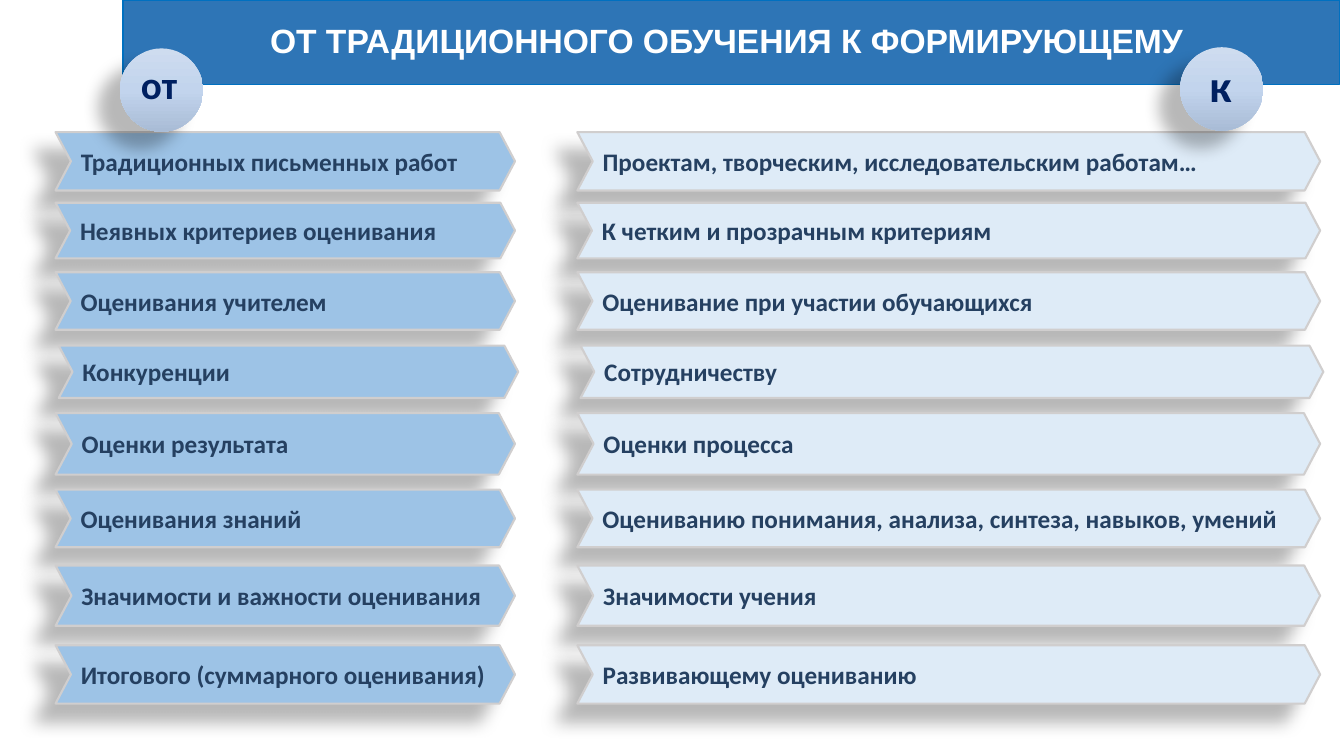
from copy import deepcopy
from dataclasses import dataclass
from typing import Any

from lxml.etree import SubElement
from pptx import Presentation
from pptx.dml.color import RGBColor
from pptx.enum.shapes import MSO_SHAPE
from pptx.enum.text import MSO_ANCHOR, MSO_AUTO_SIZE, PP_ALIGN
from pptx.oxml.ns import qn
from pptx.util import Cm, Pt

COLORS = {
    "banner": "2E75B6",
    "banner_line": "0070C0",
    "title": "FFFFFF",
    "from": "9DC3E6",
    "to": "DEEBF7",
    "arrow_line": "D0CECE",
    "arrow_text": "254061",
    "badge_text": "002060",
    "badge_top": "CEDCEF",
    "badge_middle": "C2D4ED",
    "badge_bottom": "A9BCD6",
    "shadow": "000000",
}
BADGE_SIZE = 2.1
BADGE_STOPS = ((0, "badge_top"), (0.5, "badge_middle"), (1, "badge_bottom"))


@dataclass(frozen=True)
class Column:
    left: float
    width: float
    color: str


@dataclass(frozen=True)
class Row:
    top: float
    height: float
    texts: tuple[str, str]
    shift: float = 0


@dataclass(frozen=True)
class Badge:
    left: float
    top: float
    text: str
    size: int
    text_left: float
    text_top: float
    text_width: float
    text_height: float


COLUMNS = (Column(1.4, 11.58, "from"), Column(14.55, 18.72, "to"))
ROWS = (
    Row(3.33, 1.47, ("Традиционных письменных работ",
                     "Проектам, творческим, исследовательским работам…")),
    Row(5.11, 1.4, ("Неявных критериев оценивания", "К четким и прозрачным критериям")),
    Row(6.86, 1.45, ("Оценивания учителем", "Оценивание при участии обучающихся")),
    Row(8.71, 1.32, ("Конкуренции", "Сотрудничеству"), 0.08),
    Row(10.41, 1.55, ("Оценки результата", "Оценки процесса")),
    Row(12.34, 1.45, ("Оценивания знаний",
                      "Оцениванию понимания, анализа, синтеза, навыков, умений")),
    Row(14.25, 1.52, ("Значимости и важности оценивания", "Значимости учения")),
    Row(16.26, 1.47, ("Итогового (суммарного оценивания)", "Развивающему оцениванию")),
)
BADGES = (
    Badge(3.02, 1.22, "от", 28, 3.3, 1.4, 1.42, 1.45),
    Badge(29.74, 1.19, "к", 32, 30.23, 1.32, 1.07, 1.63),
)


def rgb(name: str) -> RGBColor:
    return RGBColor.from_string(COLORS[name])


def set_formats(target: Any, formats: dict[str, Any]) -> None:
    for name, value in formats.items():
        setattr(target, name, value)


def set_solid(shape: Any, fill: str, line: str, width: float) -> None:
    shape.fill.solid()
    shape.fill.fore_color.rgb = rgb(fill)
    shape.line.color.rgb = rgb(line)
    shape.line.width = Pt(width)


def write(shape: Any, text: str, font: str, size: int, color: str,
          frame_formats: dict[str, Any], para_formats: dict[str, Any]) -> None:
    set_formats(shape.text_frame, frame_formats)
    para = shape.text_frame.paragraphs[0]
    set_formats(para, para_formats)
    span = para.add_run()
    span.text = text
    set_formats(span.font, {"name": font, "size": Pt(size), "bold": True})
    span.font.color.rgb = rgb(color)


def add_shadow(shape: Any) -> None:
    shape.shadow.inherit = False
    effects = shape._element.spPr.find(qn("a:effectLst"))
    shadow = SubElement(effects, qn("a:outerShdw"), {
        "blurRad": str(Pt(11.8)), "dist": str(Pt(19.7)),
        "dir": str(141 * 60000), "algn": "ctr", "rotWithShape": "0"})
    color = SubElement(shadow, qn("a:srgbClr"), val=COLORS["shadow"])
    SubElement(color, qn("a:alpha"), val="28000")


def add_title(page: Any) -> None:
    title = page.shapes.title
    set_formats(title, {"left": Cm(3.1), "top": Cm(0), "width": Cm(30.66), "height": Cm(2.13)})
    set_solid(title, "banner", "banner_line", 1)
    write(title, "ОТ ТРАДИЦИОННОГО ОБУЧЕНИЯ К ФОРМИРУЮЩЕМУ ", "Arial", 24, "title",
          {"vertical_anchor": MSO_ANCHOR.MIDDLE, "word_wrap": True,
           "auto_size": MSO_AUTO_SIZE.NONE},
          {"alignment": PP_ALIGN.CENTER, "line_spacing": 0.9})


def add_arrow(page: Any, column: Column, row: Row, text: str) -> None:
    arrow = page.shapes.add_shape(
        MSO_SHAPE.CHEVRON, Cm(column.left + row.shift), Cm(row.top),
        Cm(column.width), Cm(row.height))
    arrow.adjustments[0] = 0.264
    set_solid(arrow, column.color, "arrow_line", 1.5)
    add_shadow(arrow)
    write(arrow, text, "Calibri", 18, "arrow_text",
          {"vertical_anchor": MSO_ANCHOR.MIDDLE, "word_wrap": True},
          {"alignment": PP_ALIGN.LEFT})


def add_badge(page: Any, badge: Badge) -> None:
    circle = page.shapes.add_shape(
        MSO_SHAPE.OVAL, Cm(badge.left), Cm(badge.top), Cm(BADGE_SIZE), Cm(BADGE_SIZE))
    circle.fill.gradient()
    circle.fill.gradient_angle = 270
    stop_list = circle._element.spPr.find(qn("a:gradFill")).find(qn("a:gsLst"))
    stop_list.append(deepcopy(stop_list[0]))
    for stop, (position, color) in zip(circle.fill.gradient_stops, BADGE_STOPS):
        stop.position = position
        stop.color.rgb = rgb(color)
    circle.line.fill.background()
    add_shadow(circle)
    box = page.shapes.add_textbox(
        Cm(badge.text_left), Cm(badge.text_top), Cm(badge.text_width), Cm(badge.text_height))
    write(box, badge.text, "Calibri", badge.size, "badge_text",
          {"word_wrap": False, "auto_size": MSO_AUTO_SIZE.SHAPE_TO_FIT_TEXT},
          {"alignment": PP_ALIGN.LEFT})


def main() -> None:
    deck = Presentation()
    set_formats(deck, {"slide_width": Cm(33.87), "slide_height": Cm(19.05)})
    page = deck.slides.add_slide(deck.slide_layouts[5])
    add_title(page)
    for index, column in enumerate(COLUMNS):
        for row in ROWS:
            add_arrow(page, column, row, row.texts[index])
    for badge in BADGES:
        add_badge(page, badge)
    deck.save("out.pptx")


if __name__ == "__main__":
    main()
